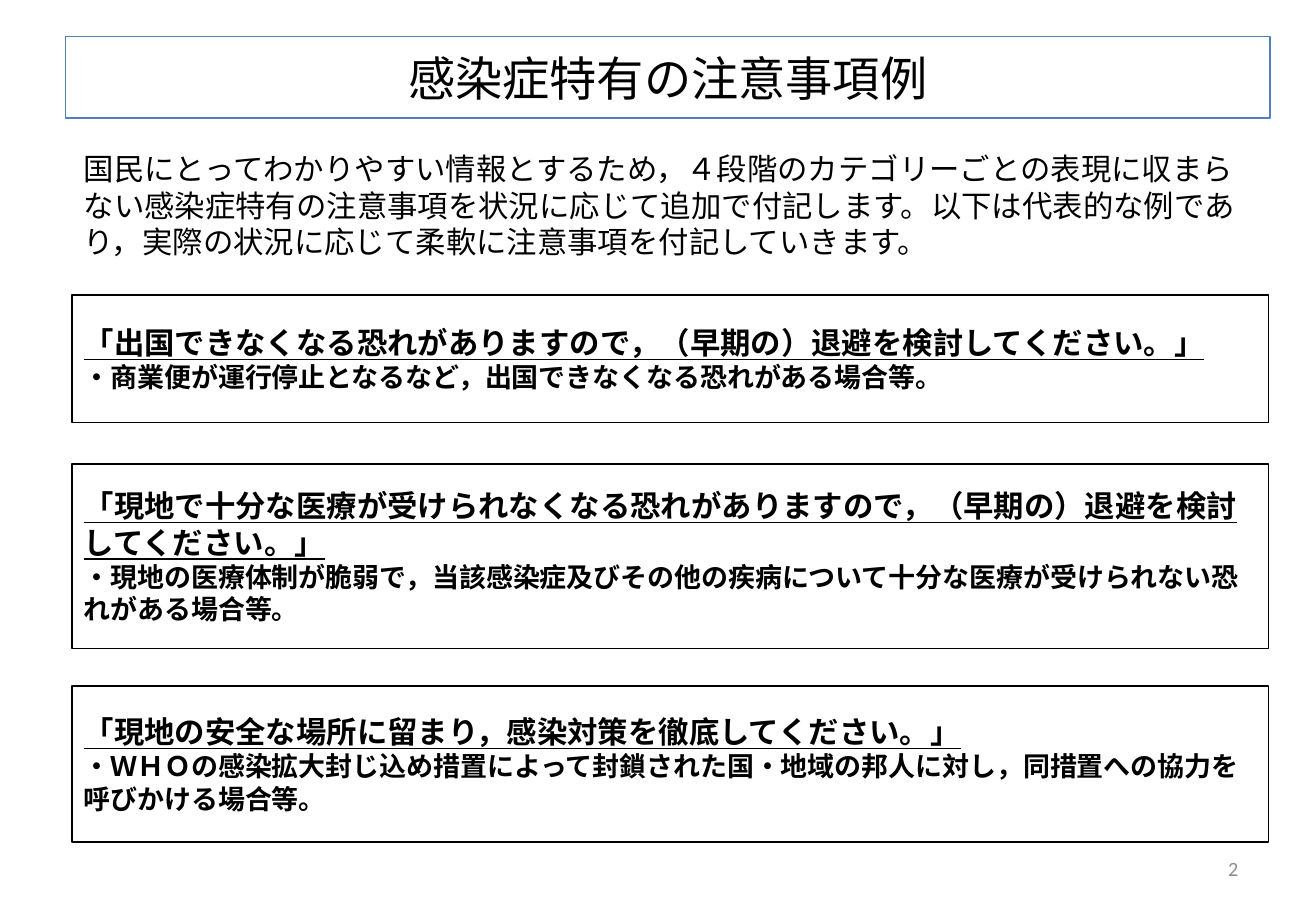
from pptx import Presentation
from pptx.dml.color import RGBColor
from pptx.enum.text import MSO_ANCHOR as Anchor, MSO_AUTO_SIZE as AutoSize, PP_ALIGN as Align
from pptx.enum.shapes import MSO_SHAPE as Shape
from pptx.util import Emu, Pt

COLORS = {"ink": "000000", "title_edge": "4F81BD", "number": "8C8C8C"}
EMU_PER_PX = 9144
FONT = "Calibri"

INTRO = (
    "国民にとってわかりやすい情報とするため，４段階のカテゴリーごとの表現に収まらない"
    "感染症特有の注意事項を状況に応じて追加で付記します。以下は代表的な例であり，"
    "実際の状況に応じて柔軟に注意事項を付記していきます。"
)
NOTICES = [
    (243, 105,
     "「出国できなくなる恐れがありますので，（早期の）退避を検討してください。」",
     "・商業便が運行停止となるなど，出国できなくなる恐れがある場合等。"),
    (382, 152,
     "「現地で十分な医療が受けられなくなる恐れがありますので，（早期の）退避を検討してください。」",
     "・現地の医療体制が脆弱で，当該感染症及びその他の疾病について十分な医療が受けられない恐れがある場合等。"),
    (565, 128,
     "「現地の安全な場所に留まり，感染対策を徹底してください。」",
     "・ＷＨＯの感染拡大封じ込め措置によって封鎖された国・地域の邦人に対し，同措置への協力を呼びかける場合等。"),
]


class NoticePage:
    """Draws the elements of one slide in a shared style."""

    def __init__(self, deck):
        self.page = deck.slides.add_slide(deck.slide_layouts[5])

    def lengths(self, *values):
        return [Emu(value * EMU_PER_PX) for value in values]

    def outline(self, shape, color):
        shape.line.color.rgb = RGBColor.from_string(COLORS[color])
        shape.line.width = Pt(1)

    def set_text(self, para, text, size, color="ink", align=Align.LEFT, bold=False, underline=False):
        para.text = text
        para.alignment = align
        font = para.font
        font.name, font.size = FONT, Pt(size)
        font.bold, font.underline = bold, underline
        font.color.rgb = RGBColor.from_string(COLORS[color])

    def title(self, text, *place):
        title = self.page.shapes.title
        title.left, title.top, title.width, title.height = self.lengths(*place)
        self.outline(title, "title_edge")
        title.text_frame.vertical_anchor = Anchor.MIDDLE
        self.set_text(title.text_frame.paragraphs[0], text, 28, align=Align.CENTER)

    def label(self, text, size, *place, anchor=Anchor.TOP, fit=AutoSize.NONE, **style):
        frame = self.page.shapes.add_textbox(*self.lengths(*place)).text_frame
        frame.word_wrap = True
        frame.auto_size = fit
        frame.vertical_anchor = anchor
        self.set_text(frame.paragraphs[0], text, size, **style)

    def notice(self, phrase, case, *place):
        box = self.page.shapes.add_shape(Shape.RECTANGLE, *self.lengths(*place))
        box.shadow.inherit = False
        box.fill.background()
        self.outline(box, "ink")
        frame = box.text_frame
        frame.word_wrap = True
        frame.vertical_anchor = Anchor.MIDDLE
        self.set_text(frame.paragraphs[0], phrase, 18, bold=True, underline=True)
        self.set_text(frame.add_paragraph(), case, 16, bold=True)


def main():
    deck = Presentation()
    deck.slide_width, deck.slide_height = Emu(1083 * EMU_PER_PX), Emu(750 * EMU_PER_PX)
    page = NoticePage(deck)
    page.title("感染症特有の注意事項例", 54, 30, 991, 67)
    page.label("2", 12, 776, 695, 253, 40, anchor=Anchor.MIDDLE, color="number", align=Align.RIGHT)
    for top, height, phrase, case in NOTICES:
        page.notice(phrase, case, 59, top, 985, height)
    page.label(INTRO, 18, 59, 119, 985, 101, fit=AutoSize.SHAPE_TO_FIT_TEXT)
    deck.save("out.pptx")


if __name__ == "__main__":
    main()
